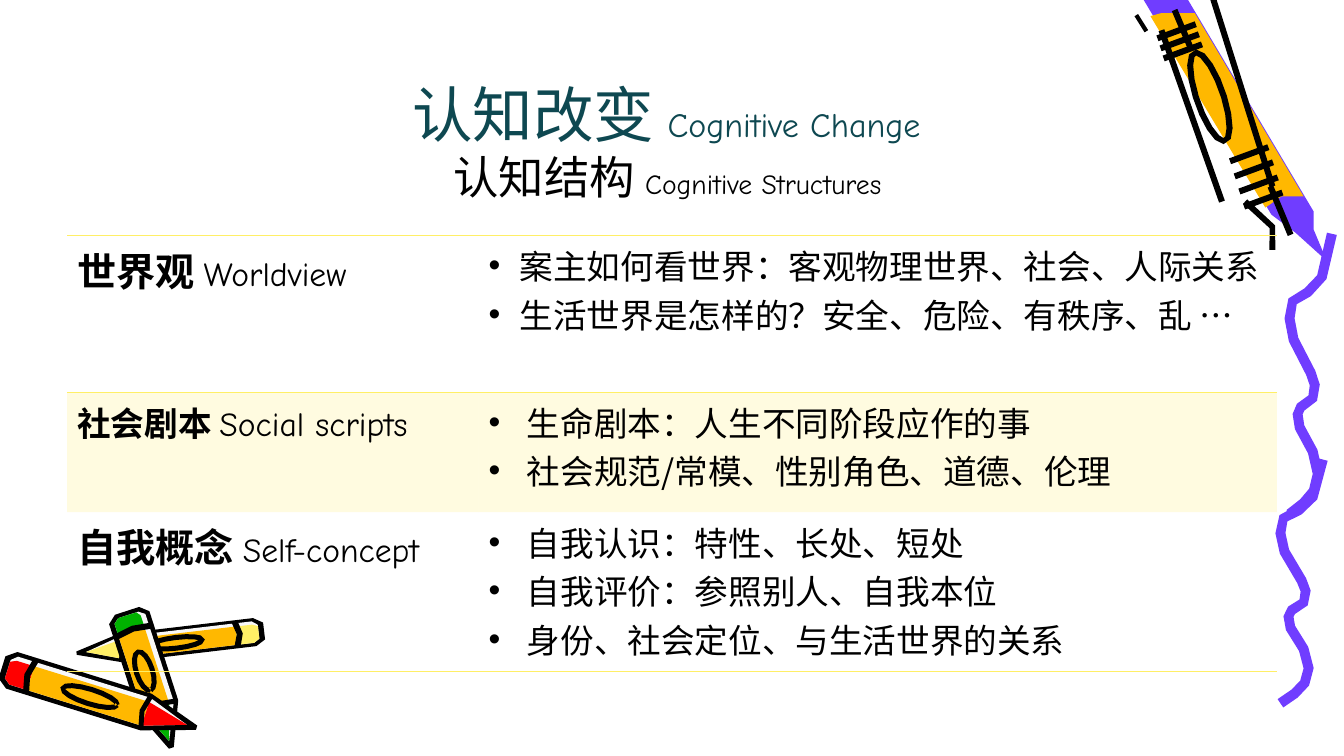
from dataclasses import dataclass
from math import cos, hypot, pi, sin

from lxml.etree import SubElement
from pptx import Presentation
from pptx.dml.color import RGBColor as Rgb
from pptx.enum.shapes import MSO_CONNECTOR as Connector
from pptx.enum.text import MSO_ANCHOR as Anchor, MSO_AUTO_SIZE as AutoSize, PP_ALIGN as Align
from pptx.oxml import parse_xml
from pptx.oxml.ns import nsdecls, qn
from pptx.util import Inches, Pt


@dataclass(frozen=True)
class Theme:
    latin: str = "Comic Neue"
    chinese: str = "Noto Sans CJK SC"
    title: str = "0E4851"
    ink: str = "000000"
    purple: str = "703DFF"
    orange: str = "FFB800"
    paper: str = "F8F8F8"
    yellow: str = "FFEF66"
    red: str = "FF0000"
    green: str = "00B200"
    title_sizes: tuple = (43.2, 24.3)
    subtitle_sizes: tuple = (32.4, 19.8)
    large: float = 28
    body: float = 24


theme = Theme()


def write_span(para, text, size=theme.body, color=theme.ink, bold=False, font=theme.latin):
    span = para.add_run()
    span.text = text
    span.font.size, span.font.bold, span.font.name = Pt(size), bold, font
    span.font.color.rgb = Rgb.from_string(color)
    SubElement(span.font._element, qn("a:ea")).set("typeface", theme.chinese)


def draw_outline(shapes, color, points, stroke=0):
    """Fill the polygon of the points (inches) or, given a stroke width, a ribbon along them."""
    if stroke:
        near, far = [], []
        for index, (x, y) in enumerate(points):
            before, after = points[max(index - 1, 0)], points[min(index + 1, len(points) - 1)]
            run, rise = after[0] - before[0], after[1] - before[1]
            reach = stroke / 2 / hypot(run, rise)
            near.append((x - rise * reach, y + run * reach))
            far.append((x + rise * reach, y - run * reach))
        points = near + far[::-1]
    corners = [(Inches(x), Inches(y)) for x, y in points]
    builder = shapes.build_freeform(*corners[0])
    builder.add_line_segments(corners[1:], close=True)
    outline = builder.convert_to_shape()
    outline.shadow.inherit = False
    outline.fill.solid()
    outline.fill.fore_color.rgb = Rgb.from_string(color)
    outline.line.fill.background()


# Page
deck = Presentation()
deck.slide_width, deck.slide_height = Inches(13.33), Inches(7.5)
page_width, page_height = deck.slide_width, deck.slide_height
page = deck.slides.add_slide(deck.slide_layouts[5])
left, width = int(page_width * 0.05), int(page_width * 0.9)
circle = [(cos(pi * step / 8), sin(pi * step / 8)) for step in range(17)]

# Large crayon: wax, paper sleeve, then loose ink strokes
large_crayon = page.shapes.add_group_shape().shapes
wax = [(11.32, -0.04), (12.61, 2.13), (12.85, 2.31), (13.16, 2.59), (13.03, 2.28), (13.03, 2.1), (11.76, -0.04)]
sleeve = [(12.55, 2.06), (12.71, 1.95), (12.93, 1.95), (11.85, 0.13), (11.52, 0.13), (11.41, 0.16)]
draw_outline(large_crayon, theme.purple, wax)
draw_outline(large_crayon, theme.orange, sleeve)

slant = 0.31  # sideways drift of the ink for each inch down
left_edge = [(11.52, 0.3), (12.12, 2)]
right_edge = [(12.02, -0.05), (12.62, 1.85)]
oval = [(12 + 0.14 * x + 0.44 * slant * y, 0.96 + 0.44 * y) for x, y in circle]
cap_mark = [(11.65, 0.1), (11.82, 0.5)]
tip_marks = [[(12.35, 2), (12.62, 2.25), (12.62, 2.48)], [(12.6, 1.85), (12.8, 2.33)]]
rungs = [[(x + slant * gap * step, top + gap * step), (x + 0.38 + slant * gap * step, top - 0.14 + gap * step)]
         for x, top, gap, count in ((11.48, 0.38, 0.1, 3), (12.2, 1.6, 0.15, 4)) for step in range(count)]
for ink_stroke in [left_edge, right_edge, oval, cap_mark, *tip_marks, *rungs]:
    draw_outline(large_crayon, theme.ink, ink_stroke, stroke=0.06)

side_mark = large_crayon.add_connector(
    Connector.STRAIGHT, Inches(11.27), Inches(0.15), Inches(11.37), Inches(0.31))
side_mark.line.width = Pt(3)
side_mark.line.color.rgb = Rgb.from_string(theme.ink)
SubElement(side_mark._element.spPr, qn("a:effectLst"))

# Small crayons, back to front: wax colour, butt, tip, half width, where the sleeve ends
small_crayons = [
    (theme.yellow, (2.62, 6.26), (0.76, 6.48), -0.14, 0.77),
    (theme.green, (1.26, 6.06), (1.7, 7.42), 0.21, 0.7),
    (theme.red, (0.02, 6.62), (1.95, 7.22), 0.19, 0.74),
]
for wax_color, (butt_x, butt_y), (tip_x, tip_y), half_width, sleeve_end in small_crayons:
    crayon = page.shapes.add_group_shape().shapes
    run, rise = tip_x - butt_x, tip_y - butt_y
    length = hypot(run, rise)
    middle = (0.17 + sleeve_end) / 2
    # Parts as (share of the length, share of the half width)
    parts = [
        (theme.ink, [(0, -0.6), (0.05, -1), (sleeve_end, -1), (1, -0.12), (1, 0.12),
                     (sleeve_end, 1), (0.05, 1), (0, 0.6)], 0),
        (theme.paper, [(0.03, -0.5), (0.06, -0.78), (sleeve_end, -0.78), (0.95, 0),
                       (sleeve_end, 0.75), (0.06, 0.75), (0.03, 0.5)], 0),
        (wax_color, [(0.03, -0.4), (0.06, -0.55), (0.15, -0.55), (0.15, 0.75), (0.06, 0.75), (0.03, 0.5)], 0),
        (theme.orange, [(0.15, -0.55), (sleeve_end, -0.55), (sleeve_end, 0.75), (0.15, 0.75)], 0),
        (wax_color, [(sleeve_end, -0.55), (0.95, 0), (sleeve_end, 0.75)], 0),
        (theme.ink, [(0.15, -0.9), (0.13, 0), (0.15, 0.9)], 0.06),
        (theme.ink, [(sleeve_end, -0.9), (sleeve_end - 0.02, 0), (sleeve_end, 0.9)], 0.05),
        (theme.ink, [(middle + 0.14 * x, 0.1 + 0.38 * y) for x, y in circle], 0.05),
    ]
    for color, outline, stroke in parts:
        placed = [(butt_x + along * run - across * half_width * rise / length,
                   butt_y + along * rise + across * half_width * run / length) for along, across in outline]
        draw_outline(crayon, color, placed, stroke=stroke)

# Wavy trail: the lower wave is the upper one, moved and flattened
wave = [(12.79, 5.1), (12.93, 4.99), (13.03, 4.87), (13.07, 4.7), (13.02, 4.48), (12.89, 4.24), (12.87, 4.11),
        (12.9, 4.04), (13.02, 3.95), (13.04, 3.82), (13, 3.7), (12.83, 3.37), (12.79, 3.16), (12.82, 2.99),
        (12.97, 2.9), (13.11, 2.75), (13.21, 2.32)]
wave_top = 2.31
trail = page.shapes.add_group_shape().shapes
for shift, top, flatten in ((-0.09, 4.55, 0.87), (0, wave_top, 1)):
    draw_outline(trail, theme.purple,
                 [(x + shift, top + (y - wave_top) * flatten) for x, y in wave], stroke=0.1)

# Title
title = page.shapes.title
title.left, title.top, title.width, title.height = left, int(page_height * 0.1), width, Inches(1.33)
frame = title.text_frame
frame.auto_size, frame.vertical_anchor, frame.word_wrap = AutoSize.NONE, Anchor.BOTTOM, True
para = frame.paragraphs[0]
para.alignment, para.line_spacing = Align.CENTER, 0.97
for text, size in zip(("认知改变 ", "Cognitive Change "), theme.title_sizes):
    write_span(para, text, size=size, color=theme.title)
para.add_line_break()
for text, size in zip(("认知结构 ", "Cognitive Structures "), theme.subtitle_sizes):
    write_span(para, text, size=size)

# Table: height, heading size, heading, English name, bullet indent, points, ruled sides, tint
rows = [
    (1.55, theme.large, "世界观 ", "Worldview", 0.31,
     ["案主如何看世界：客观物理世界、社会、人际关系", "生活世界是怎样的？安全、危险、有秩序、乱 …"], "TB", False),
    (1.19, theme.body, "社会剧本 ", "Social scripts", 0.38,
     ["生命剧本：人生不同阶段应作的事", "社会规范/常模、性别角色、道德、伦理"], "T", True),
    (1.58, theme.large, "自我概念 ", "Self-concept", 0.38,
     ["自我认识：特性、长处、短处", "自我评价：参照别人、自我本位", "身份、社会定位、与生活世界的关系"], "B", False),
]
table_height = Inches(sum(row[0] for row in rows))
table = page.shapes.add_table(len(rows), 2, left, Inches(2.34), width, table_height).table
table.first_row = table.horz_banding = False
table._tbl.tblPr.find(qn("a:tableStyleId")).text = "{2D5ABB26-0587-4C30-8999-92F81FD0307C}"
for column, share in zip(table.columns, (0.34, 0.66)):
    column.width = int(width * share)

rule_fill = f'<a:solidFill><a:srgbClr val="{theme.yellow}"/></a:solidFill>'
for row, (height, size, heading, english, indent, points, ruled, tinted) in zip(table.rows, rows):
    row.height = Inches(height)
    name_cell, points_cell = row.cells
    para = name_cell.text_frame.paragraphs[0]
    write_span(para, heading, size=size, bold=True)
    write_span(para, english)
    frame = points_cell.text_frame
    for number, point in enumerate(points):
        para = frame.add_paragraph() if number else frame.paragraphs[0]
        properties = para._p.get_or_add_pPr()
        properties.set("marL", str(Inches(indent)))
        properties.set("indent", str(-Inches(indent)))
        SubElement(properties, qn("a:buFont")).set("typeface", "Arial")
        SubElement(properties, qn("a:buChar")).set("char", "•")
        write_span(para, point, font=theme.chinese)
    for cell in (name_cell, points_cell):
        if tinted:
            cell.fill.solid()
            cell.fill.fore_color.rgb = Rgb.from_string(theme.yellow)
            tint = cell._tc.tcPr.find(f"{qn('a:solidFill')}/{qn('a:srgbClr')}")
            SubElement(tint, qn("a:alpha")).set("val", "20000")
        else:
            cell.fill.background()
        for order, side in enumerate("LRTB"):
            line_fill = rule_fill if side in ruled else "<a:noFill/>"
            cell._tc.tcPr.insert(order, parse_xml(
                f'<a:ln{side} {nsdecls("a")} w="{Pt(1)}">{line_fill}</a:ln{side}>'))

deck.save("out.pptx")
